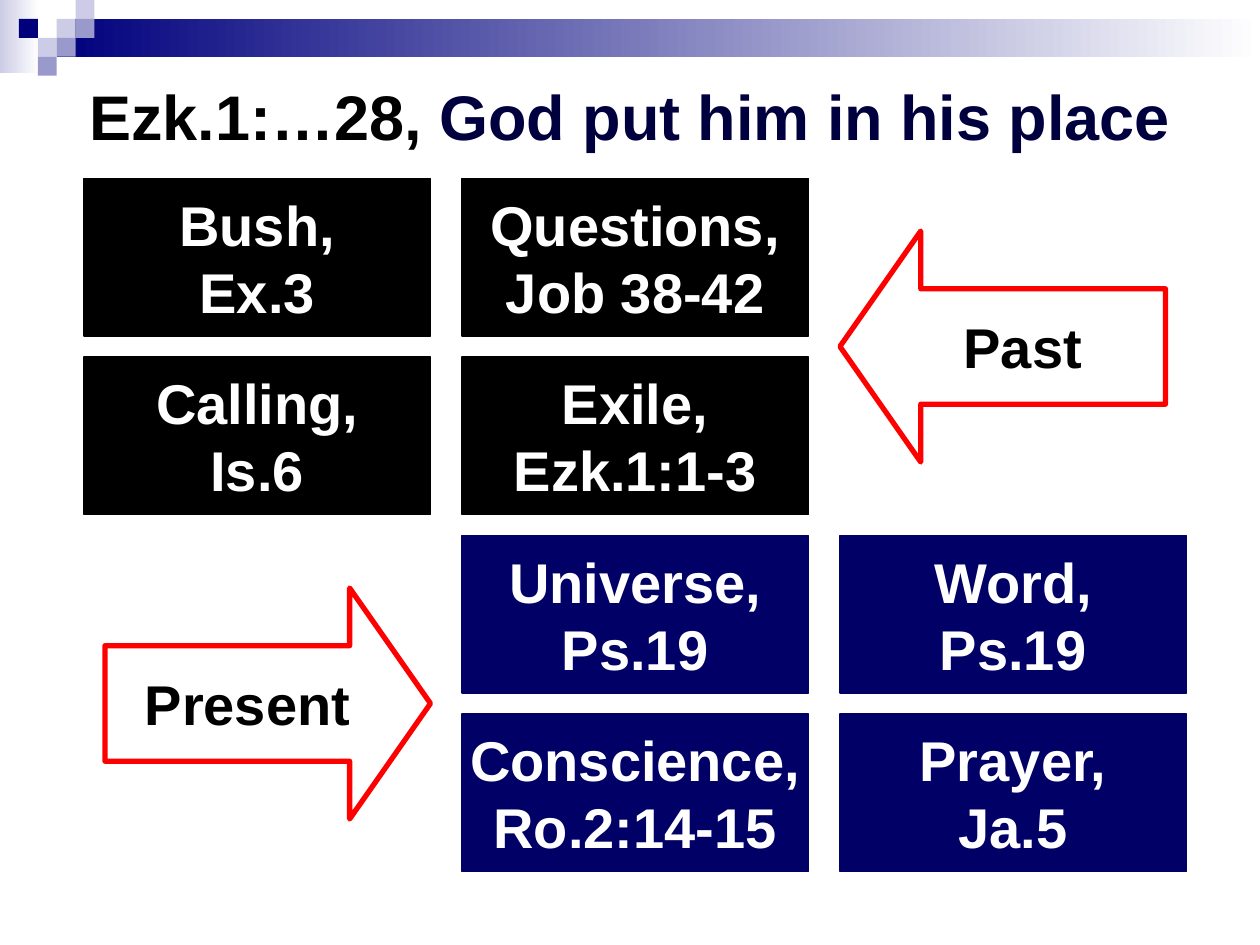
from dataclasses import dataclass

import pptx
import pptx.dml.color
import pptx.enum.shapes
import pptx.enum.text
import pptx.slide
import pptx.shapes.autoshape
import pptx.text.text
import pptx.util

Pt = pptx.util.Pt
RGBColor = pptx.dml.color.RGBColor
ShapeType = pptx.enum.shapes.MSO_SHAPE

BLACK = RGBColor(0x00, 0x00, 0x00)
WHITE = RGBColor(0xFF, 0xFF, 0xFF)
RED = RGBColor(0xFF, 0x00, 0x00)
NAVY = RGBColor(0x00, 0x00, 0x7D)
BOX_BLUE = RGBColor(0x00, 0x00, 0x66)
TITLE_BLUE = RGBColor(0x00, 0x00, 0x3E)
LAVENDER = RGBColor(0xCC, 0xCC, 0xE6)
PERIWINKLE = RGBColor(0x99, 0x99, 0xCC)

FONT = "Arial"
GRID_LEFT, GRID_TOP = 48, 102
COLUMN_STEP, ROW_STEP = 216, 102
BOX_WIDTH, BOX_HEIGHT = 198, 90
ARROW_WIDTH, ARROW_HEIGHT = 186, 132
SQUARE = 10.8


@dataclass(frozen=True)
class Band:
    left: float
    top: float
    width: float
    height: float
    color: RGBColor


@dataclass(frozen=True)
class Square:
    column: int
    row: int
    color: RGBColor


@dataclass(frozen=True)
class Box:
    column: int
    row: int
    lines: tuple[str, str]
    color: RGBColor


@dataclass(frozen=True)
class Arrow:
    kind: ShapeType
    left: float
    top: float
    label: str


BANDS = [
    Band(0, 0, 22.3, 41.8, LAVENDER),
    Band(32.4, 10.8, 687.6, 21.6, NAVY),
]
SQUARES = [
    Square(3, 1, LAVENDER),
    Square(4, 0, LAVENDER),
    Square(4, 1, PERIWINKLE),
    Square(2, 2, LAVENDER),
    Square(1, 1, NAVY),
    Square(3, 2, PERIWINKLE),
    Square(2, 3, PERIWINKLE),
]
BOXES = [
    Box(0, 0, ("Bush,", "Ex.3"), BLACK),
    Box(1, 0, ("Questions,", "Job 38-42"), BLACK),
    Box(0, 1, ("Calling,", "Is.6"), BLACK),
    Box(1, 1, ("Exile,", "Ezk.1:1-3"), BLACK),
    Box(1, 2, ("Universe,", "Ps.19"), BOX_BLUE),
    Box(2, 2, ("Word,", "Ps.19"), BOX_BLUE),
    Box(1, 3, ("Conscience,", "Ro.2:14-15"), BOX_BLUE),
    Box(2, 3, ("Prayer,", "Ja.5"), BOX_BLUE),
]
ARROWS = [
    Arrow(ShapeType.LEFT_ARROW, 480, 132, "Past"),
    Arrow(ShapeType.RIGHT_ARROW, 60, 336, "Present"),
]


def add_run(paragraph: pptx.text.text._Paragraph, text: str, size: float, color: RGBColor) -> None:
    paragraph.alignment = pptx.enum.text.PP_ALIGN.CENTER
    run = paragraph.add_run()
    run.text = text
    run.font.name = FONT
    run.font.size = Pt(size)
    run.font.bold = True
    run.font.color.rgb = color


def add_plain_shape(
    slide: pptx.slide.Slide, kind: ShapeType, left: float, top: float, width: float, height: float
) -> pptx.shapes.autoshape.Shape:
    shape = slide.shapes.add_shape(kind, Pt(left), Pt(top), Pt(width), Pt(height))
    shape.shadow.inherit = False
    shape.line.fill.background()
    return shape


def fill_solid(shape: pptx.shapes.autoshape.Shape, color: RGBColor) -> None:
    shape.fill.solid()
    shape.fill.fore_color.rgb = color


def outline(shape: pptx.shapes.autoshape.Shape, color: RGBColor, width: float) -> None:
    shape.line.color.rgb = color
    shape.line.width = Pt(width)


def write_lines(shape: pptx.shapes.autoshape.Shape, lines: tuple[str, ...], color: RGBColor) -> None:
    frame = shape.text_frame
    frame.word_wrap = False
    frame.vertical_anchor = pptx.enum.text.MSO_ANCHOR.MIDDLE
    for index, line in enumerate(lines):
        paragraph = frame.add_paragraph() if index else frame.paragraphs[0]
        add_run(paragraph, line, 32, color)


def draw_band(slide: pptx.slide.Slide, band: Band) -> None:
    shape = add_plain_shape(slide, ShapeType.RECTANGLE, band.left, band.top, band.width, band.height)
    shape.fill.gradient()
    shape.fill.gradient_angle = 0
    for stop, color in zip(shape.fill.gradient_stops, (band.color, WHITE)):
        stop.color.rgb = color


def draw_square(slide: pptx.slide.Slide, square: Square) -> None:
    left, top = square.column * SQUARE, square.row * SQUARE
    shape = add_plain_shape(slide, ShapeType.RECTANGLE, left, top, SQUARE, SQUARE)
    fill_solid(shape, square.color)


def draw_box(slide: pptx.slide.Slide, box: Box) -> None:
    left = GRID_LEFT + box.column * COLUMN_STEP
    top = GRID_TOP + box.row * ROW_STEP
    shape = add_plain_shape(slide, ShapeType.RECTANGLE, left, top, BOX_WIDTH, BOX_HEIGHT)
    fill_solid(shape, box.color)
    outline(shape, box.color, 0.75)
    write_lines(shape, box.lines, WHITE)


def draw_arrow(slide: pptx.slide.Slide, arrow: Arrow) -> None:
    shape = add_plain_shape(slide, arrow.kind, arrow.left, arrow.top, ARROW_WIDTH, ARROW_HEIGHT)
    shape.adjustments[0] = 0.5
    shape.adjustments[1] = 0.35
    fill_solid(shape, WHITE)
    outline(shape, RED, 3)
    write_lines(shape, (arrow.label,), BLACK)


def write_title(slide: pptx.slide.Slide) -> None:
    title = slide.shapes.title
    title.left, title.top, title.width, title.height = Pt(36), Pt(36), Pt(648), Pt(60)
    frame = title.text_frame
    frame.auto_size = pptx.enum.text.MSO_AUTO_SIZE.NONE
    frame.vertical_anchor = pptx.enum.text.MSO_ANCHOR.MIDDLE
    add_run(frame.paragraphs[0], "Ezk.1:…28, ", 36, BLACK)
    add_run(frame.paragraphs[0], "God put him in his place", 36, TITLE_BLUE)


def main() -> None:
    presentation = pptx.Presentation()
    presentation.slide_width, presentation.slide_height = Pt(720), Pt(540)
    slide = presentation.slides.add_slide(presentation.slide_layouts.get_by_name("Title Only"))
    write_title(slide)
    for band in BANDS:
        draw_band(slide, band)
    for square in SQUARES:
        draw_square(slide, square)
    for box in BOXES:
        draw_box(slide, box)
    for arrow in ARROWS:
        draw_arrow(slide, arrow)
    presentation.save("out.pptx")


if __name__ == "__main__":
    main()
